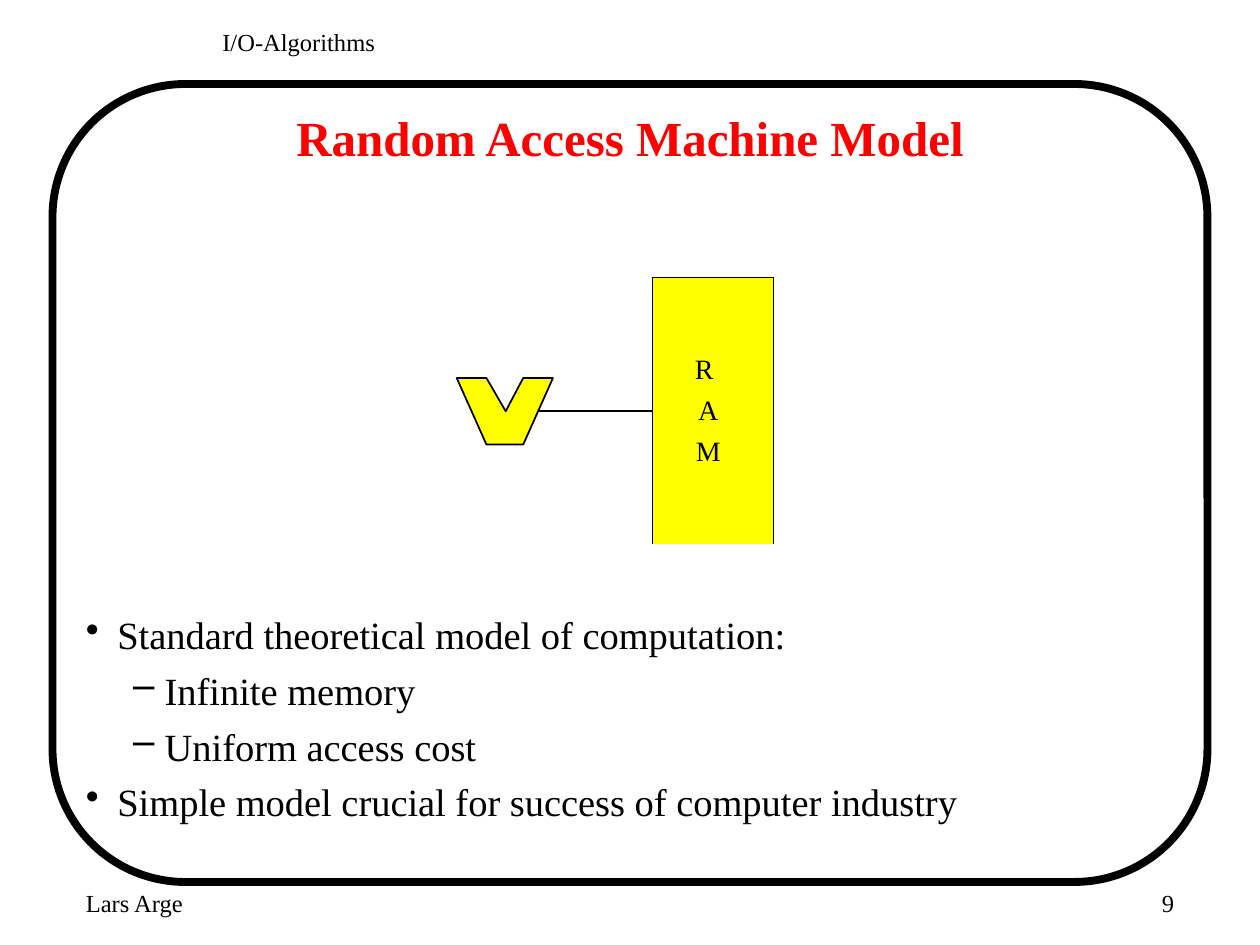
from dataclasses import dataclass
from typing import Optional

from lxml.etree import SubElement
from pptx import Presentation
from pptx.dml.color import RGBColor
from pptx.enum.shapes import MSO_CONNECTOR, MSO_SHAPE
from pptx.enum.text import MSO_ANCHOR, PP_ALIGN
from pptx.oxml.ns import qn
from pptx.util import Pt

FONT = "Times New Roman"
HUES = {"ink": "000000", "title": "FF0000", "part": "FFFF00", "page": "FFFFFF"}


@dataclass
class Box:
    x: float
    y: float
    w: float
    h: float


@dataclass
class Line:
    text: str
    left: float = 0
    hang: float = 0
    level: int = 0
    mark: Optional[str] = None


@dataclass
class Label:
    box: Box
    lines: list[Line]
    size: float = 14
    hue: str = "ink"
    bold: bool = False
    align: PP_ALIGN = PP_ALIGN.LEFT
    anchor: MSO_ANCHOR = MSO_ANCHOR.TOP
    gap: float = 0


def color(name: str) -> RGBColor:
    return RGBColor.from_string(HUES[name])


def style(shape, fill: Optional[str], line: Optional[str], width: float = 1):
    shape.shadow.inherit = False
    if fill:
        shape.fill.solid()
        shape.fill.fore_color.rgb = color(fill)
    else:
        shape.fill.background()
    if line:
        shape.line.color.rgb = color(line)
        shape.line.width = Pt(width)
    else:
        shape.line.fill.background()
    return shape


def add_box(slide, kind: MSO_SHAPE, box: Box, fill: Optional[str],
            line: Optional[str], width: float = 1):
    shape = slide.shapes.add_shape(
        kind, Pt(box.x), Pt(box.y), Pt(box.w), Pt(box.h))
    return style(shape, fill, line, width)


def add_line(slide, x1: float, x2: float, y: float, hue: str, width: float):
    """Draw a level line without a shadow."""
    line = slide.shapes.add_connector(
        MSO_CONNECTOR.STRAIGHT, Pt(x1), Pt(y), Pt(x2), Pt(y))
    line.line.color.rgb = color(hue)
    line.line.width = Pt(width)
    SubElement(line._element.spPr, qn("a:effectLst"))
    return line


def add_label(slide, label: Label) -> None:
    box = label.box
    frame = slide.shapes.add_textbox(
        Pt(box.x), Pt(box.y), Pt(box.w), Pt(box.h)).text_frame
    frame.word_wrap = True
    frame.vertical_anchor = label.anchor
    for i, line in enumerate(label.lines):
        para = frame.add_paragraph() if i else frame.paragraphs[0]
        para.alignment = label.align
        para.level = line.level
        para.space_before = Pt(label.gap)
        props = para._p.get_or_add_pPr()
        props.set("marL", str(Pt(line.left)))
        props.set("indent", str(Pt(-line.hang)))
        if line.mark:
            SubElement(props, qn("a:buChar"), char=line.mark)
        run = para.add_run()
        run.text = line.text
        font = run.font
        font.name, font.size, font.bold = FONT, Pt(label.size), label.bold
        font.color.rgb = color(label.hue)


def point(text: str) -> Line:
    return Line(text, 18, 18, 0, "•")


def dash(text: str) -> Line:
    return Line(text, 45, 18, 1, "–")


LABELS = [
    Label(Box(42, 504, 150, 36), [Line("Lars Arge")]),
    Label(Box(120, 12, 474, 30), [Line("I/O-Algorithms")]),
    Label(Box(528, 504, 150, 36), [Line("9")], align=PP_ALIGN.RIGHT),
    Label(Box(54, 54, 612, 48), [Line("Random Access Machine Model")], 28,
          "title", True, PP_ALIGN.CENTER, MSO_ANCHOR.MIDDLE),
    Label(Box(42, 345.6, 636, 150), [
        point("Standard theoretical model of computation:"),
        dash("Infinite memory"),
        dash("Uniform access cost"),
        point("Simple model crucial for success of computer industry"),
    ], 22, gap=5.5),
]
LETTERS = Label(Box(390, 197.3, 29.5, 72.7),
                [Line(c, 18, 18) for c in ("R\t", "A", "M")],
                16, align=PP_ALIGN.CENTER, gap=4.2)
MEMORY = Box(372.8, 158.6, 69.2, 152.8)
CPU = [(261, 216), (278.4, 216), (288.7, 235), (299, 216),
       (316.2, 216), (299, 254.2), (278.4, 254.2)]


def main() -> None:
    deck = Presentation()
    deck.slide_width, deck.slide_height = Pt(720), Pt(540)
    slide = deck.slides.add_slide(deck.slide_layouts[6])

    add_box(slide, MSO_SHAPE.FLOWCHART_ALTERNATE_PROCESS,
            Box(30, 48, 660, 456), None, "ink", 4.5)
    for label in LABELS:
        add_label(slide, label)

    ram = add_box(slide, MSO_SHAPE.RECTANGLE, MEMORY, "part", "ink")
    mid = MEMORY.y + MEMORY.h / 2
    bus = add_line(slide, 306.7, MEMORY.x, mid, "ink", 1)
    bus.end_connect(ram, 1)

    pen = slide.shapes.build_freeform(*CPU[0], scale=Pt(1))
    pen.add_line_segments(CPU[1:], close=True)
    style(pen.convert_to_shape(), "part", "ink")
    add_label(slide, LETTERS)

    # The open lower edge shows that memory has no end.
    add_line(slide, MEMORY.x, MEMORY.x + MEMORY.w,
             MEMORY.y + MEMORY.h, "page", 1.38)
    add_box(slide, MSO_SHAPE.RECTANGLE, Box(361.5, 311, 98.5, 15),
            "page", None)
    deck.save("out.pptx")


if __name__ == "__main__":
    main()
